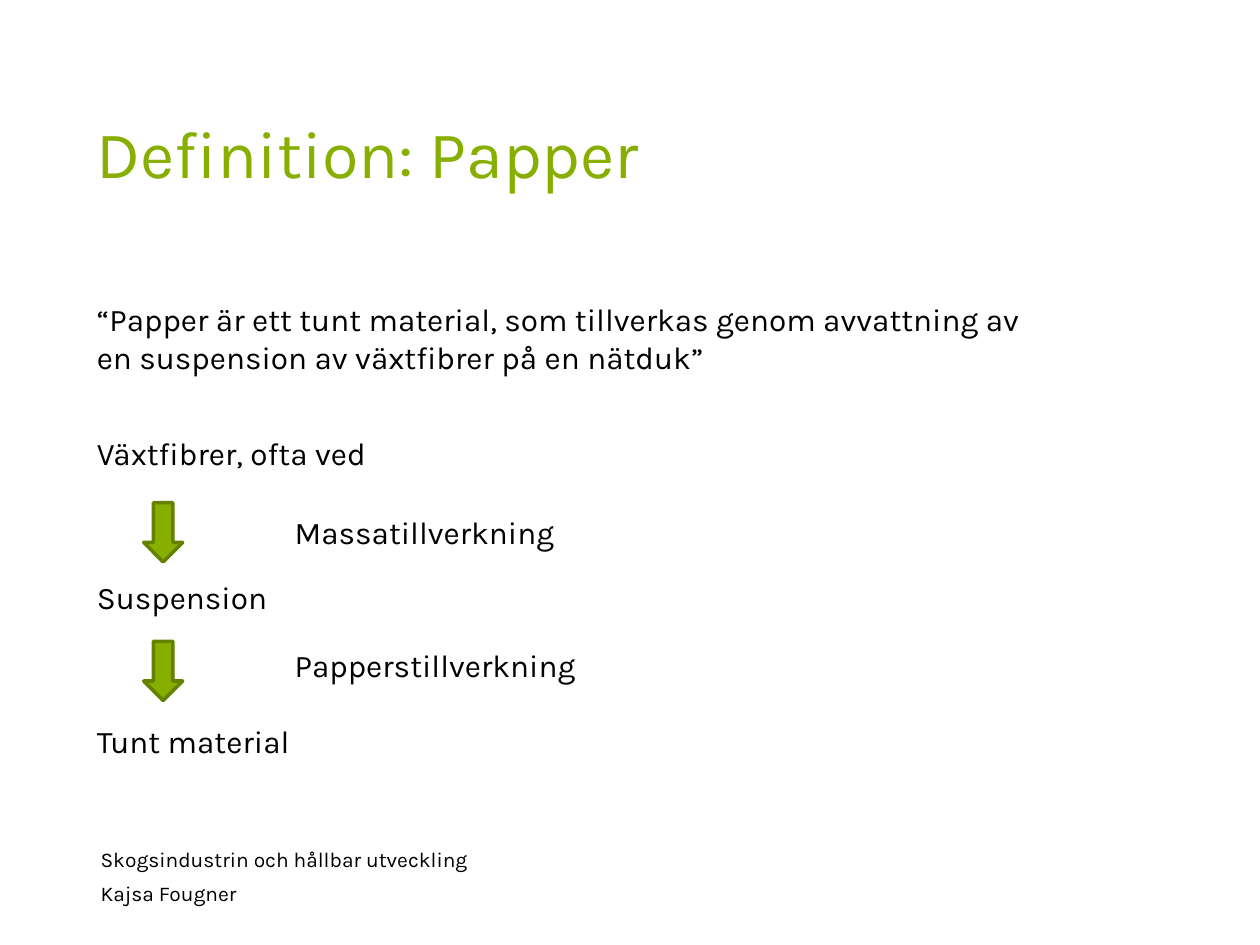
import pptx
import pptx.dml.color
import pptx.enum.shapes
import pptx.util

Inches = pptx.util.Inches
Pt = pptx.util.Pt

HUES = {"leaf": "87AF00", "moss": "648100", "ink": "000000"}
FACE = "Karla"


def color(name):
    return pptx.dml.color.RGBColor.from_string(HUES[name])


def add_text(slide, place, lines, size, hue="ink"):
    """Add a text box; each line is a pair of wording and space before."""
    box = slide.shapes.add_textbox(*map(Inches, place))
    frame = box.text_frame
    frame.word_wrap = True
    for i, (words, gap) in enumerate(lines):
        para = frame.paragraphs[0] if i == 0 else frame.add_paragraph()
        para.space_before = Pt(gap)
        run = para.add_run()
        run.text = words
        style = {"name": FACE, "size": Pt(size)}
        for key, value in style.items():
            setattr(run.font, key, value)
        run.font.color.rgb = color(hue)


def add_arrow(slide, top):
    kind = pptx.enum.shapes.MSO_SHAPE.DOWN_ARROW
    arrow = slide.shapes.add_shape(
        kind, Inches(1.14), Inches(top), Inches(0.31), Inches(0.47))
    arrow.shadow.inherit = False
    arrow.fill.solid()
    arrow.fill.fore_color.rgb = color("leaf")
    arrow.line.color.rgb = color("moss")
    arrow.line.width = Pt(2)


def main():
    deck = pptx.Presentation()
    deck.slide_width, deck.slide_height = Inches(10), Inches(7.5)
    slide = deck.slides.add_slide(deck.slide_layouts[6])

    add_text(slide, (0.67, 0.84, 8.66, 0.7),
             [("Definition: Papper", 0)], 38, "leaf")
    add_text(slide, (0.67, 2.33, 7.8, 4.02), [
        ("“Papper är ett tunt material, som tillverkas genom avvattning av "
         "en suspension av växtfibrer på en nätduk”", 0),
        ("Växtfibrer, ofta ved", 33.4),
        ("Suspension", 60.6),
        ("Tunt material", 60.6),
    ], 18)

    steps = [("Massatillverkning", 3.99, 4.02),
             ("Papperstillverkning", 5.09, 5.08)]
    for words, tip, top in steps:
        add_arrow(slide, tip)
        add_text(slide, (2.24, top, 3.62, 0.4), [(words, 0)], 18)

    add_text(slide, (0.7, 6.67, 4.52, 0.56), [
        ("Skogsindustrin och hållbar utveckling", 0),
        ("Kajsa Fougner", 4.8),
    ], 12)
    deck.save("out.pptx")


if __name__ == "__main__":
    main()
